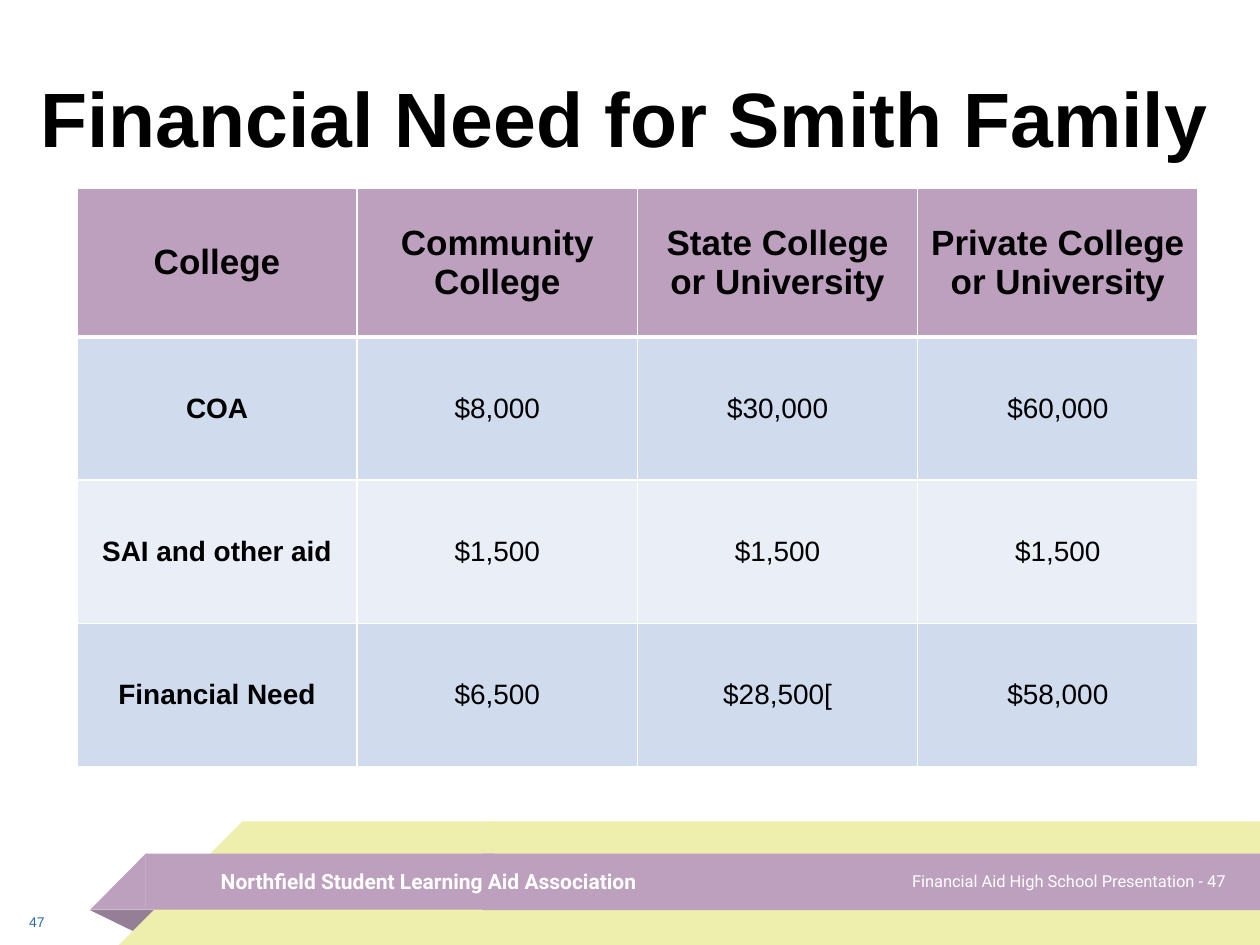
from lxml.etree import SubElement
from pptx import Presentation
from pptx.dml.color import RGBColor
from pptx.enum.shapes import MSO_SHAPE as SHAPE
from pptx.enum.text import MSO_ANCHOR as ANCHOR, PP_ALIGN as ALIGN
from pptx.oxml.ns import qn
from pptx.util import Cm, Pt

COLORS = {
    "white": "FFFFFF", "black": "000000", "blue": "2A6CAA",
    "yellow": "EEEFAC", "purple": "BD9FBE", "fold": "957F97",
    "band_dark": "D0DBEE", "band_light": "E9EEF7",
}

# preset, left, top, width, height (cm), colour
BANNER = [
    (SHAPE.RECTANGLE, 9.86, 16.56, 15.54, 2.49, "yellow"),
    (SHAPE.ISOSCELES_TRIANGLE, 1.8, 18.34, 1.45, 0.48, "fold"),
    (SHAPE.RECTANGLE, 4.88, 16.56, 5.08, 2.49, "yellow"),
    (SHAPE.RIGHT_TRIANGLE, 2.4, 16.56, 2.49, 2.49, "yellow"),
    (SHAPE.RECTANGLE, 2.93, 17.21, 7.03, 1.13, "purple"),
    (SHAPE.RIGHT_TRIANGLE, 1.82, 17.21, 1.12, 1.13, "purple"),
    (SHAPE.RECTANGLE, 9.73, 17.21, 15.67, 1.14, "purple"),
]

# text, left, top, width, height (cm), size, font, colour, bold, alignment
TEXTS = [
    ("Northfield Student Learning Aid Association",
     4.2, 17.25, 10.97, 1.02, 12, "Roboto", "white", True, ALIGN.LEFT),
    ("Financial Need for Smith Family ",
     0, 0.76, 25.63, 3.18, 44, "Arial", "black", True, ALIGN.CENTER),
    ("47", 0.34, 18.08, 1.14, 1.02, 8, "Arial", "blue", False, ALIGN.LEFT),
    ("Financial Aid High School Presentation - 47",
     17.32, 17.24, 7.63, 1.02, 9.4, "Roboto", "white", False, ALIGN.RIGHT),
]

NEED_ROWS = [
    ("College", "Community College", "State College or University",
     "Private College or University"),
    ("COA", "$8,000", "$30,000", "$60,000"),
    ("SAI and other aid", "$1,500", "$1,500", "$1,500"),
    ("Financial Need", "$6,500", "$28,500[", "$58,000"),
]
TABLE_LEFT, TABLE_TOP, COL_WIDTH = 1.55, 3.79, 5.65
ROW_HEIGHTS = [3.0, 2.89, 2.89, 2.89]


def rgb(name):
    return RGBColor.from_string(COLORS[name])


def style(p, size, font, color, bold, align):
    p.alignment = align
    for r in p.runs:
        r.font.size, r.font.name, r.font.bold = Pt(size), font, bold
        r.font.color.rgb = rgb(color)


def add_banner_part(slide, preset, left, top, width, height, color):
    s = slide.shapes.add_shape(preset, Cm(left), Cm(top), Cm(width), Cm(height))
    s.shadow.inherit = False
    s.fill.solid()
    s.fill.fore_color.rgb = rgb(color)
    s.line.fill.background()
    if preset == SHAPE.RIGHT_TRIANGLE:
        s._element.spPr.xfrm.set("flipH", "1")
    elif preset == SHAPE.ISOSCELES_TRIANGLE:
        s.rotation = 180
        s.adjustments[0] = 0.32


def add_text(slide, text, left, top, width, height, *look):
    tf = slide.shapes.add_textbox(Cm(left), Cm(top), Cm(width), Cm(height)).text_frame
    tf.word_wrap = True
    tf.vertical_anchor = ANCHOR.MIDDLE
    tf.text = text
    style(tf.paragraphs[0], *look)


def set_borders(cell, widths):
    """Draw white borders; widths maps each side's tag to points."""
    tcPr = cell._tc.get_or_add_tcPr()
    for index, (side, width) in enumerate(widths.items()):
        ln = SubElement(tcPr, qn(f"a:{side}"), w=str(Pt(width)))
        fill = SubElement(ln, qn("a:solidFill"))
        SubElement(fill, qn("a:srgbClr"), val=COLORS["white"])
        tcPr.insert(index, ln)  # borders precede the cell fill


def add_need_table(slide):
    table = slide.shapes.add_table(
        len(NEED_ROWS), len(NEED_ROWS[0]), Cm(TABLE_LEFT), Cm(TABLE_TOP),
        Cm(COL_WIDTH * len(NEED_ROWS[0])), Cm(sum(ROW_HEIGHTS))).table
    for col in table.columns:
        col.width = Cm(COL_WIDTH)
    for i, (values, height) in enumerate(zip(NEED_ROWS, ROW_HEIGHTS)):
        table.rows[i].height = Cm(height)
        header = i == 0
        fill = "purple" if header else "band_dark" if i % 2 else "band_light"
        for j, value in enumerate(values):
            cell = table.cell(i, j)
            cell.text = value
            cell.vertical_anchor = ANCHOR.MIDDLE
            cell.fill.solid()
            cell.fill.fore_color.rgb = rgb(fill)
            style(cell.text_frame.paragraphs[0], 20 if header else 16, "Arial",
                  "black", header or j == 0, ALIGN.CENTER)
            set_borders(cell, {"lnL": 1, "lnR": 1, "lnT": 3 if i == 1 else 1,
                               "lnB": 3 if header else 1})


def main():
    prs = Presentation()
    prs.slide_width, prs.slide_height = Cm(25.4), Cm(19.05)
    slide = prs.slides.add_slide(prs.slide_layouts[6])
    for part in BANNER:
        add_banner_part(slide, *part)
    add_need_table(slide)
    for text in TEXTS:
        add_text(slide, *text)
    prs.save("out.pptx")


if __name__ == "__main__":
    main()
